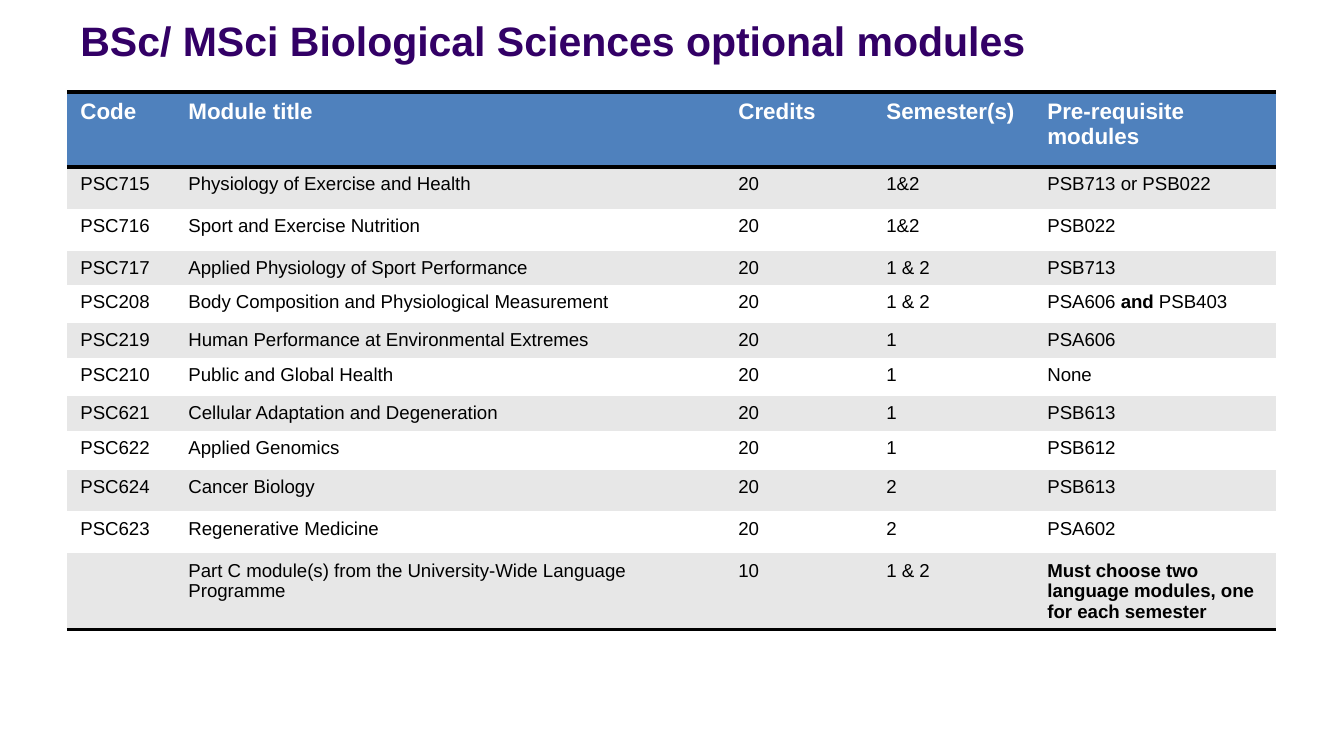
from lxml import etree
from pptx import Presentation
from pptx.dml.color import RGBColor
from pptx.enum.text import MSO_ANCHOR, PP_ALIGN
from pptx.oxml.ns import qn
from pptx.util import Pt

LEFT, MIDDLE = PP_ALIGN.LEFT, MSO_ANCHOR.MIDDLE
W, H = 1344, 756
SCALE = 9144000 / W
FONT = "Arial"
NO_STYLE = "{2D5ABB26-0587-4C30-8999-92F81FD0307C}"
COLORS = {
    "title": "330066",
    "header": "4F81BD",
    "band": "E7E7E7",
    "white": "FFFFFF",
    "black": "000000",
}
COLS = [108, 550, 148, 161, 242]
HEIGHTS = [75, 42, 42, 34, 38, 35, 38, 34, 39, 42, 42, 76]
MODULES = [
    ["Code", "Module title", "Credits", "Semester(s)", "Pre-requisite modules"],
    ["PSC715", "Physiology of Exercise and Health", "20", "1&2", "PSB713 or PSB022"],
    ["PSC716", "Sport and Exercise Nutrition", "20", "1&2", "PSB022"],
    ["PSC717", "Applied Physiology of Sport Performance", "20", "1 & 2", "PSB713"],
    ["PSC208", "Body Composition and Physiological Measurement", "20", "1 & 2",
     "PSA606 **and** PSB403"],
    ["PSC219", "Human Performance at Environmental Extremes", "20", "1", "PSA606"],
    ["PSC210", "Public and Global Health", "20", "1", "None"],
    ["PSC621", "Cellular Adaptation and Degeneration", "20", "1", "PSB613"],
    ["PSC622", "Applied Genomics", "20", "1", "PSB612"],
    ["PSC624", "Cancer Biology", "20", "2", "PSB613"],
    ["PSC623", "Regenerative Medicine", "20", "2", "PSA602"],
    ["", "Part C module(s) from the University-Wide Language Programme", "10", "1 & 2",
     "**Must choose two language modules, one for each semester**"],
]


def px(n):
    """Convert px to EMU."""
    return round(n * SCALE)


class Deck:
    """Hold the style and the current slide."""

    def __init__(self):
        """Start a presentation with one title-only slide."""
        self.prs = Presentation()
        self.prs.slide_width, self.prs.slide_height = px(W), px(H)
        self.slide = self.prs.slides.add_slide(self.prs.slide_layouts[5])

    def add_runs(self, p, text, size, color, bold=False):
        """Add runs to a paragraph, with **marked** parts in bold."""
        for i, part in enumerate(text.split("**")):
            if part:
                r = p.add_run()
                r.text = part
                r.font.name = FONT
                r.font.size = Pt(size)
                r.font.bold = bold or i % 2 == 1
                r.font.color.rgb = RGBColor.from_string(COLORS[color])

    def title(self, text, x, y, w, h):
        """Place and fill the title placeholder."""
        sp = self.slide.shapes.title
        sp.left, sp.top, sp.width, sp.height = map(px, (x, y, w, h))
        tf = sp.text_frame
        tf.word_wrap = True
        tf.vertical_anchor = MIDDLE
        p = tf.paragraphs[0]
        p.alignment = LEFT
        self.add_runs(p, text, 22, "title", True)

    def rule(self, cell, edges):
        """Draw a black 2 pt border on the given cell edges."""
        tcPr = cell._tc.get_or_add_tcPr()
        for i, edge in enumerate(edges):
            ln = etree.Element(qn(f"a:ln{edge}"), w=str(Pt(2)))
            fill = etree.SubElement(ln, qn("a:solidFill"))
            etree.SubElement(fill, qn("a:srgbClr"), val=COLORS["black"])
            tcPr.insert(i, ln)

    def table(self, rows, x, y, cols, heights):
        """Add a banded table with a ruled header and last row."""
        frame = self.slide.shapes.add_table(
            len(rows), len(cols), px(x), px(y), px(sum(cols)), px(sum(heights)))
        table = frame.table
        table._tbl.tblPr.find(qn("a:tableStyleId")).text = NO_STYLE
        for col, w in zip(table.columns, cols):
            col.width = px(w)
        for i, (row, h, texts) in enumerate(zip(table.rows, heights, rows)):
            row.height = px(h)
            head = i == 0
            fill = "header" if head else "band" if i % 2 else "white"
            edges = "TB" if head else "B" if i == len(rows) - 1 else ""
            for cell, text in zip(row.cells, texts):
                cell.fill.solid()
                cell.fill.fore_color.rgb = RGBColor.from_string(COLORS[fill])
                self.rule(cell, edges)
                self.add_runs(cell.text_frame.paragraphs[0], text,
                              12 if head else 10, "white" if head else "black", head)


def main():
    """Build and save the slide."""
    deck = Deck()
    deck.title("BSc/ MSci Biological Sciences optional modules", 67, -23, 1210, 126)
    deck.table(MODULES, 67, 92, COLS, HEIGHTS)
    deck.prs.save("out.pptx")


if __name__ == "__main__":
    main()
